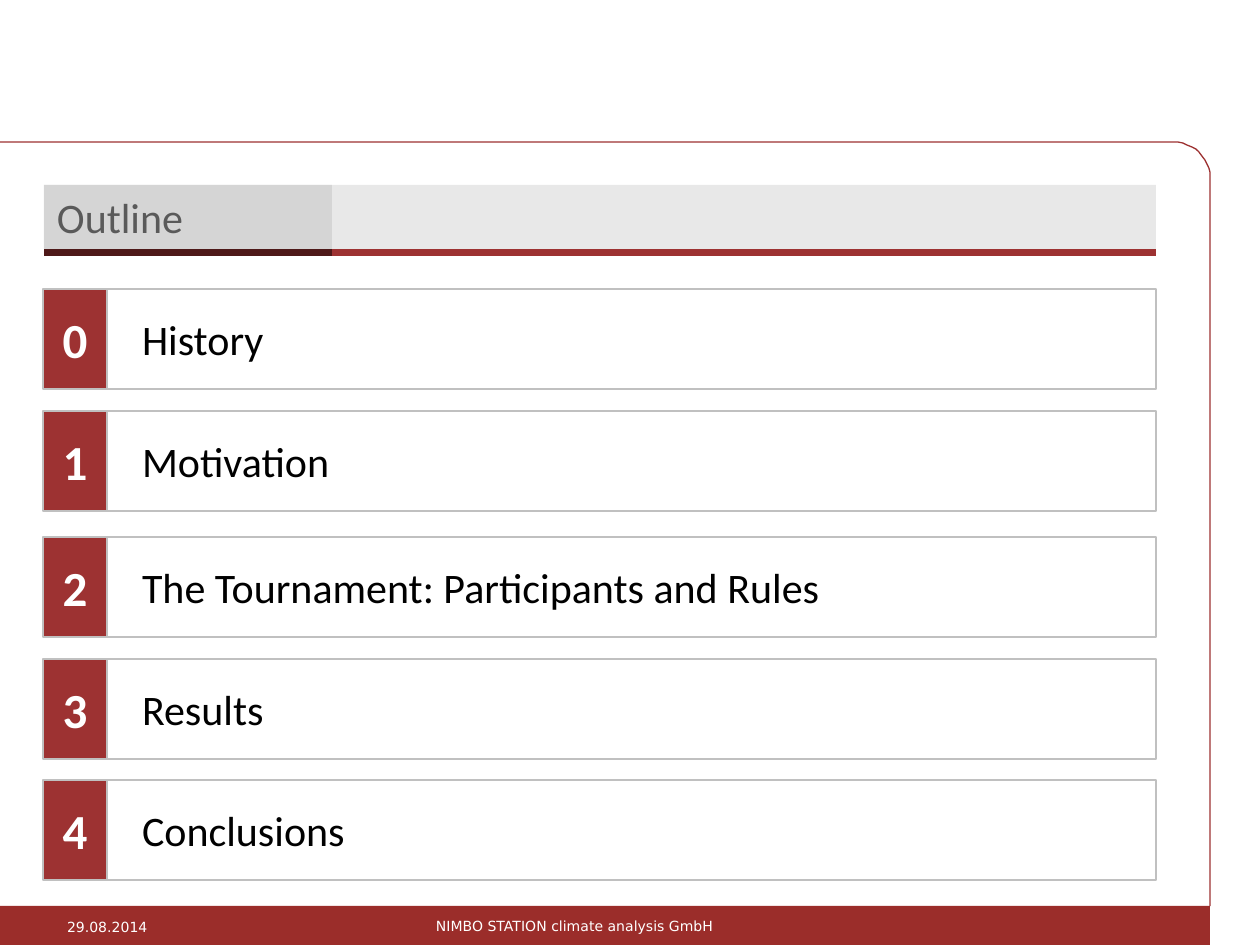
from math import cos, pi, sin

from lxml import etree
from pptx import Presentation
from pptx.dml.color import RGBColor
from pptx.enum.shapes import MSO_SHAPE
from pptx.enum.text import MSO_ANCHOR, MSO_AUTO_SIZE, PP_ALIGN
from pptx.oxml.ns import qn
from pptx.util import Emu, Inches, Pt

RECTANGLE = MSO_SHAPE.RECTANGLE
PROCESS = MSO_SHAPE.FLOWCHART_PROCESS
MIDDLE = MSO_ANCHOR.MIDDLE
NO_AUTOFIT = MSO_AUTO_SIZE.NONE
LEFT, CENTER = PP_ALIGN.LEFT, PP_ALIGN.CENTER

# Content
TITLE = "Outline"
DATE = "29.08.2014"
FOOTER = "NIMBO STATION climate analysis GmbH"
TOPICS = [  # number, topic, top of row
    ("0", "History", 289),
    ("1", "Motivation", 411),
    ("2", "The Tournament: Participants and Rules", 537),
    ("3", "Results", 659),
    ("4", "Conclusions", 780),
]

# Look
RED, DARK_RED, FOOTER_RED = "9D3232", "4E1919", "9B2D2A"
GREY, WHITE, BLACK = "C0C0C0", "FFFFFF", "000000"
BODY_FONT, FOOTER_FONT = "Calibri", "DejaVu Sans"

# Layout in px
LEFT_EDGE, NUMBER_LEFT, TOPIC_LEFT, RIGHT_EDGE = 44, 43, 107, 1156
ROW_HEIGHT = 100
TITLE_TOP, TITLE_HEIGHT, BAR_HEIGHT, ACCENT_WIDTH = 185, 64, 7, 288
FRAME_TOP, FRAME_RIGHT, FOOTER_TOP, SLIDE_BOTTOM = 142, 1210, 906, 945
CORNER_WIDTH, CORNER_HEIGHT, CORNER_STEPS = 37, 35, 12
PX = 914400 / 126


def px(value):
    return Emu(round(value * PX))


def color(hex_text):
    return RGBColor.from_string(hex_text)


def paint(shape, fill=None, line=None, line_width=1, opacity=100):
    if fill:
        shape.fill.solid()
        shape.fill.fore_color.rgb = color(fill)
        if opacity < 100:
            fill_color = shape._element.spPr.find(qn("a:solidFill"))[0]
            alpha = etree.SubElement(fill_color, qn("a:alpha"))
            alpha.set("val", str(opacity * 1000))
    else:
        shape.fill.background()
    if line:
        shape.line.color.rgb = color(line)
        shape.line.width = Pt(line_width)
    else:
        shape.line.fill.background()


def add_box(slide, left, top, width, height, kind=RECTANGLE, **look):
    box = slide.shapes.add_shape(kind, px(left), px(top), px(width), px(height))
    box.shadow.inherit = False
    paint(box, **look)
    return box


def write(shape, text, size=24, font=BODY_FONT, ink=BLACK, bold=False,
          align=LEFT, insets=(13, 6, 13, 6)):
    frame = shape.text_frame
    frame.word_wrap = True
    frame.auto_size = NO_AUTOFIT
    frame.vertical_anchor = MIDDLE
    (frame.margin_left, frame.margin_top,
     frame.margin_right, frame.margin_bottom) = map(px, insets)
    para = frame.paragraphs[0]
    para.alignment = align
    span = para.add_run()
    span.text = text
    span.font.size = Pt(size)
    span.font.name = font
    span.font.bold = bold
    span.font.color.rgb = color(ink)


def add_label(slide, text, left, top, width, height, **text_format):
    label = slide.shapes.add_textbox(px(left), px(top), px(width), px(height))
    write(label, text, size=8, font=FOOTER_FONT, ink=WHITE, **text_format)


def add_frame(slide):
    center_x, center_y = FRAME_RIGHT - CORNER_WIDTH, FRAME_TOP + CORNER_HEIGHT
    angles = [pi / 2 * step / CORNER_STEPS for step in range(CORNER_STEPS + 1)]
    corner = [(center_x + CORNER_WIDTH * sin(angle),
               center_y - CORNER_HEIGHT * cos(angle)) for angle in angles]
    builder = slide.shapes.build_freeform(0, FRAME_TOP, scale=PX)
    builder.add_line_segments(corner + [(FRAME_RIGHT, FOOTER_TOP)], close=False)
    frame = builder.convert_to_shape()
    frame.shadow.inherit = False
    paint(frame, line=RED, line_width=0.75)


def add_title(slide):
    title = slide.shapes.title
    title.left, title.top = px(LEFT_EDGE), px(TITLE_TOP)
    title.width, title.height = px(RIGHT_EDGE - LEFT_EDGE), px(TITLE_HEIGHT)
    paint(title, fill="A5A5A5", opacity=25)
    write(title, TITLE, ink="0C0C0C")

    # Accent over the title and the two-tone bar below it
    bar_top = TITLE_TOP + TITLE_HEIGHT
    bar_split = LEFT_EDGE + ACCENT_WIDTH
    add_box(slide, LEFT_EDGE, TITLE_TOP, ACCENT_WIDTH, TITLE_HEIGHT,
            fill="BFBFBF", opacity=44)
    add_box(slide, LEFT_EDGE, bar_top, ACCENT_WIDTH, BAR_HEIGHT,
            kind=PROCESS, fill=DARK_RED)
    add_box(slide, bar_split, bar_top, RIGHT_EDGE - bar_split, BAR_HEIGHT,
            kind=PROCESS, fill=RED)


def add_topic(slide, number, topic, top):
    topic_box = add_box(slide, TOPIC_LEFT, top, RIGHT_EDGE - TOPIC_LEFT,
                        ROW_HEIGHT, line=GREY)
    write(topic_box, topic, insets=(35, 10, 10, 10))
    number_box = add_box(slide, NUMBER_LEFT, top, TOPIC_LEFT - NUMBER_LEFT,
                         ROW_HEIGHT, fill=RED, line=GREY)
    write(number_box, number, size=28, ink=WHITE, bold=True, align=CENTER,
          insets=(0, 0, 0, 0))


def main():
    deck = Presentation()
    deck.slide_width, deck.slide_height = Inches(10), Inches(7.5)
    slide = deck.slides.add_slide(deck.slide_layouts[5])

    add_frame(slide)
    add_title(slide)
    for number, topic, top in TOPICS:
        add_topic(slide, number, topic, top)

    # Footer band
    footer_height = SLIDE_BOTTOM - FOOTER_TOP
    add_box(slide, 0, FOOTER_TOP, FRAME_RIGHT, footer_height, fill=FOOTER_RED)
    add_label(slide, DATE, 54, 912, 108, 30)
    add_label(slide, FOOTER, 436, FOOTER_TOP, 312, footer_height,
              insets=(0, 6, 13, 6))

    deck.save("out.pptx")


if __name__ == "__main__":
    main()
